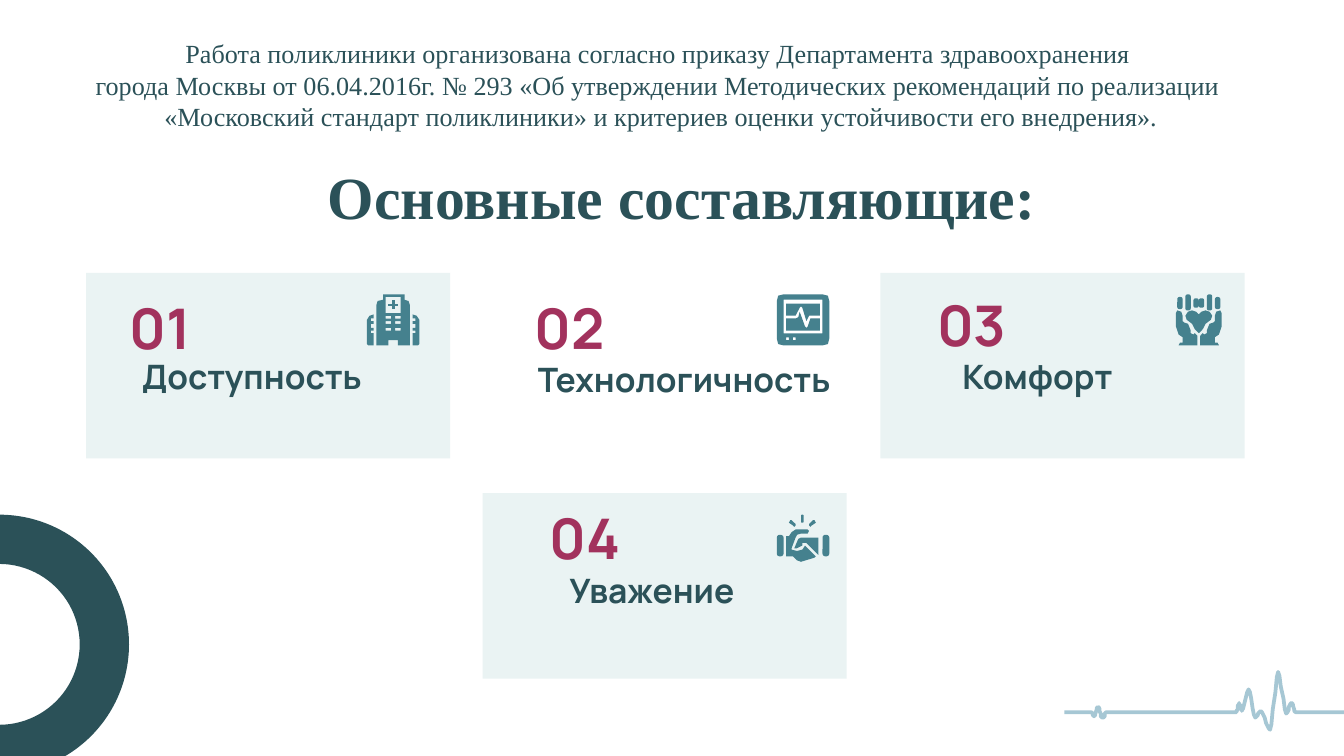
"""Build the slide on the four components of the polyclinic standard."""
from dataclasses import dataclass, field
from typing import NamedTuple

from lxml import etree
from pptx import Presentation
from pptx import util as u
from pptx.dml.color import RGBColor
from pptx.enum import shapes, text
from pptx.oxml.ns import qn

PX = 9144
DARK, BERRY, PALE, TEAL, PULSE = "2B5158", "A2325D", "EAF3F3", "45818E", "2D7A99"
SERIF, SANS = "Times New Roman", "Manrope"
INTRO = (
    "Работа поликлиники организована согласно приказу Департамента здравоохранения \n"
    "города Москвы от 06.04.2016г. № 293 «Об утверждении Методических рекомендаций по реализации \n"
    "«Московский стандарт поликлиники» и критериев оценки устойчивости его внедрения»."
)


class Box(NamedTuple):
    left: int
    top: int
    width: int
    height: int


class Style(NamedTuple):
    font: str
    size: int
    color: str
    bold: bool
    anchor: text.MSO_ANCHOR
    inset: int = 10
    wrap: bool = True


Outline = list[tuple[int, int]]


@dataclass
class Card:
    number: str
    label: str
    number_box: Box
    label_box: Box
    panel: Box | None = None


@dataclass
class Icon:
    bars: list[Box] = field(default_factory=list)
    figures: list[list[Outline]] = field(default_factory=list)


INTRO_STYLE = Style(SERIF, 14, DARK, False, text.MSO_ANCHOR.TOP, 5, False)
TITLE_STYLE = Style(SERIF, 32, DARK, True, text.MSO_ANCHOR.TOP)
NUMBER_STYLE = Style(SANS, 30, BERRY, True, text.MSO_ANCHOR.MIDDLE)
LABEL_STYLE = Style(SANS, 18, DARK, True, text.MSO_ANCHOR.BOTTOM)

CARDS = [
    Card("01", "Доступность", Box(70, 219, 98, 49), Box(55, 271, 265, 34), Box(64, 203, 271, 138)),
    Card("02", "Технологичность", Box(375, 219, 98, 49), Box(383, 273, 252, 34)),
    Card("03", "Комфорт", Box(674, 217, 98, 49), Box(646, 271, 252, 34), Box(655, 203, 271, 138)),
    Card("04", "Уважение", Box(386, 375, 98, 49), Box(359, 430, 252, 34), Box(359, 367, 271, 138)),
]

PULSE_TURNS = [
    (792, 530), (812, 530), (814, 533), (817, 526), (820, 534), (824, 530), (920, 530),
    (922, 523), (924, 529), (929, 513), (934, 534), (938, 529), (945, 543), (951, 500),
    (957, 531), (961, 523), (964, 530), (1000, 530),
]


def px(length: int) -> u.Emu:
    """Turn px into EMU."""
    return u.Emu(length * PX)


def place(box: Box) -> tuple[u.Emu, ...]:
    """Turn a px box into EMU."""
    return tuple(px(length) for length in box)


def paint(fill, color: str) -> None:
    """Give a fill one solid colour."""
    fill.solid()
    fill.fore_color.rgb = RGBColor.from_string(color)


def finish(shape, color: str) -> None:
    """Leave a shape with a plain fill only."""
    shape.shadow.inherit = False
    paint(shape.fill, color)
    shape.line.fill.background()


def rect(left: int, top: int, width: int, height: int) -> Outline:
    """List the corners of a rectangle."""
    right, bottom = left + width, top + height
    return [(left, top), (right, top), (right, bottom), (left, bottom)]


def rounded(left: int, top: int, width: int, height: int, cut: int) -> Outline:
    """List the points of a rectangle with softened corners."""
    right, bottom, bend = left + width, top + height, cut // 3
    half = [(left, top + cut), (left + bend, top + bend), (left + cut, top),
            (right - cut, top), (right - bend, top + bend), (right, top + cut)]
    return half + [(left + right - x, top + bottom - y) for x, y in half]


def mirror(outline: Outline, total: int) -> Outline:
    """Reflect an outline about half of the given sum of sides."""
    return [(total - x, y) for x, y in outline]


def draw_preset(parent, kind, box: Box, color: str, adjustment: float) -> None:
    """Draw a filled preset shape."""
    shape = parent.add_shape(kind, *place(box))
    shape.adjustments[0] = adjustment
    finish(shape, color)


def draw_outlines(parent, outlines: list[Outline], closed: bool = True):
    """Draw outlines as one freeform, inner ones being holes."""
    builder = parent.build_freeform(*outlines[0][0], scale=PX)
    for outline in outlines:
        builder.move_to(*outline[0])
        builder.add_line_segments(outline[1:], close=closed)
    return builder.convert_to_shape()


def draw_icon(page, icon: Icon) -> None:
    """Draw an icon as a group."""
    group = page.shapes.add_group_shape().shapes
    for bar in icon.bars:
        draw_preset(group, shapes.MSO_SHAPE.ROUNDED_RECTANGLE, bar, TEAL, 0.4)
    for outlines in icon.figures:
        finish(draw_outlines(group, outlines), TEAL)


def draw_pulse(page) -> None:
    """Draw the pulse line, easing between its turns."""
    points = [PULSE_TURNS[0]]
    for (x, y), (next_x, next_y) in zip(PULSE_TURNS, PULSE_TURNS[1:]):
        for part in (0.2, 0.4, 0.6, 0.8, 1):
            ease = part * part * (3 - 2 * part)
            points.append((x + (next_x - x) * part, y + (next_y - y) * ease))
    shape = draw_outlines(page.shapes, [points], closed=False)
    shape.shadow.inherit = False
    shape.fill.background()
    paint(shape.line.fill, PULSE)
    shape.line.width = u.Pt(2)
    color = shape.line._ln.find(".//" + qn("a:srgbClr"))
    etree.SubElement(color, qn("a:alpha")).set("val", "41000")


def write(shape, words: str, style: Style) -> None:
    """Fill a text shape and format its runs."""
    frame = shape.text_frame
    frame.auto_size = text.MSO_AUTO_SIZE.NONE
    frame.word_wrap = style.wrap
    frame.vertical_anchor = style.anchor
    frame.margin_left = frame.margin_right = px(10)
    frame.margin_top = frame.margin_bottom = px(style.inset)
    frame.text = words
    for para in frame.paragraphs:
        para.alignment = text.PP_ALIGN.CENTER
        for span in para.runs:
            span.font.name, span.font.size = style.font, u.Pt(style.size)
            span.font.bold = style.bold
            span.font.color.rgb = RGBColor.from_string(style.color)


def build_icons() -> list[Icon]:
    """Describe the hospital, monitor, hands and handshake."""
    wing = [(278, 234), (275, 235), (273, 238), (273, 256), (274, 257), (278, 257), (278, 248),
            (276, 248), (276, 246), (278, 246), (278, 244), (276, 244), (276, 241), (278, 241),
            (278, 239), (276, 239), (276, 237), (278, 237)]
    tower = [(285, 219), (301, 219), (301, 223), (304, 224), (305, 227), (305, 257), (296, 257),
             (296, 253), (289, 253), (289, 257), (280, 257), (280, 227), (281, 224), (285, 223)]
    windows = [rect(x, y, 4, 2) for x in (287, 294) for y in (235, 239, 244)]
    cross = [rect(289, 226, 7, 2), rect(292, 223, 2, 7)]
    hospital = Icon([], [[wing], [mirror(wing, 585)], [tower, rect(287, 221, 11, 12), *windows],
                         *[[beam] for beam in cross]])
    below = [(585, 237), (592, 237), (594, 236), (595, 232), (599, 243), (600, 244), (601, 243),
             (603, 237), (610, 237), (610, 246), (585, 246)]
    above = [(585, 226), (610, 226), (610, 235), (603, 235), (602, 235), (600, 239), (597, 229),
             (596, 228), (595, 229), (592, 235), (585, 235)]
    dots = [rect(x, 251, 2, 2) for x in (585, 590)]
    monitor = Icon([], [[rounded(578, 219, 39, 38, 5), rect(583, 223, 29, 25), *dots], [below], [above]])
    heart = [(887, 231), (884, 232), (882, 235), (883, 238), (887, 241), (889, 245), (892, 248),
             (895, 245), (897, 241), (901, 238), (902, 235), (900, 232), (897, 231), (894, 232),
             (892, 234), (890, 232)]
    palm = [(876, 231), (875, 233), (875, 243), (877, 249), (880, 251), (880, 255), (878, 255),
            (877, 257), (891, 257), (891, 250), (889, 248), (888, 249), (886, 248), (886, 246),
            (884, 241), (881, 240), (880, 239), (880, 235), (879, 232)]
    fingers = [Box(x, top, 4, height) for left, top, height in ((876, 221, 9), (882, 219, 12), (888, 222, 7))
               for x in (left, 1780 - left)]
    hands = Icon(fingers, [[heart], [palm], [mirror(palm, 1784)]])
    spark = [(588, 387), (589, 387), (592, 390), (592, 391), (591, 392), (590, 391), (587, 389)]
    sleeve = [(596, 400), (609, 400), (609, 413), (601, 405), (600, 404), (597, 404), (597, 406),
              (593, 408), (591, 408), (594, 401)]
    grip = [(592, 394), (601, 394), (602, 395), (601, 397), (596, 397), (593, 398), (592, 400),
            (589, 408), (589, 409), (593, 410), (597, 409), (599, 406), (607, 414), (606, 415),
            (596, 418), (593, 417), (590, 414), (585, 414), (585, 399), (587, 399), (589, 396)]
    cuffs = [Box(578, 398, 5, 16), Box(612, 398, 5, 16), Box(596, 383, 2, 6)]
    handshake = Icon(cuffs, [[spark], [mirror(spark, 1194)], [sleeve], [grip]])
    return [hospital, monitor, hands, handshake]


def main() -> None:
    """Build and save the deck."""
    deck = Presentation()
    deck.slide_width, deck.slide_height = px(1000), u.Emu(px(1000) * 9 // 16)
    page = deck.slides.add_slide(deck.slide_layouts[5])
    paint(page.background.fill, "FFFFFF")
    draw_pulse(page)
    draw_preset(page.shapes, shapes.MSO_SHAPE.DONUT, Box(-97, 383, 193, 193), DARK, 0.19)
    title = page.shapes.title
    title.left, title.top, title.width, title.height = place(Box(86, 109, 843, 63))
    write(title, "Основные составляющие:", TITLE_STYLE)
    write(page.shapes.add_textbox(*place(Box(55, 23, 874, 81))), INTRO, INTRO_STYLE)
    for card in CARDS:
        if card.panel:
            draw_preset(page.shapes, shapes.MSO_SHAPE.ROUNDED_RECTANGLE, card.panel, PALE, 0)
        write(page.shapes.add_textbox(*place(card.number_box)), card.number, NUMBER_STYLE)
        write(page.shapes.add_textbox(*place(card.label_box)), card.label, LABEL_STYLE)
    for icon in build_icons():
        draw_icon(page, icon)
    deck.save("out.pptx")


if __name__ == "__main__":
    main()
